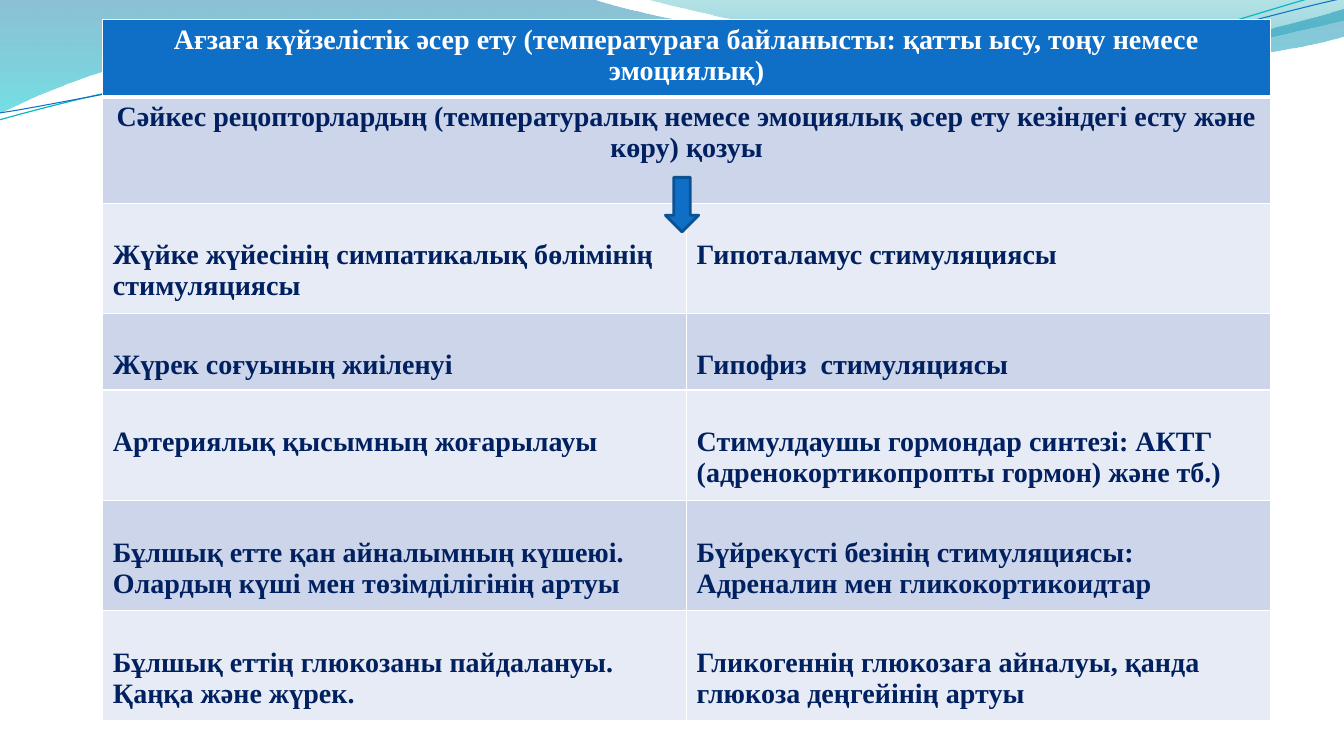
from lxml import etree
from pptx import Presentation
from pptx.dml.color import RGBColor
from pptx.enum.shapes import MSO_SHAPE as Shape
from pptx.enum.text import PP_ALIGN as Align
from pptx.oxml.ns import qn
from pptx.util import Inches, Pt

COLORS = {
    "blue": "0F6FC6", "outline": "0B5292", "teal": "0AB8BF", "navy": "002060",
    "white": "FFFFFF", "band": "CCD5EA", "light": "E7EBF5",
    "wave_blue": "0074A1", "wave_cyan": "00C6CF",
    "wave_green": "00A1A9", "wave_sky": "008BBF",
}
FONT = "Times New Roman"


def draw_wave(page, start, segments, close):
    points = [(Inches(segment[i]), Inches(segment[i + 1]))
              for segment in segments for i in range(0, len(segment), 2)]
    builder = page.shapes.build_freeform(Inches(start[0]), Inches(start[1]))
    builder.add_line_segments(points, close=close)
    wave = builder.convert_to_shape()
    wave.shadow.inherit = False
    lines = iter(list(wave._element.spPr.iter(qn("a:lnTo"))))
    for segment in segments:
        parts = [next(lines) for _ in range(len(segment) // 2)]
        if len(parts) == 3:
            curve = etree.Element(qn("a:cubicBezTo"))
            parts[0].addprevious(curve)
            for part in parts:
                curve.append(part[0])
                part.getparent().remove(part)
    return wave


def fill_cell(cell, text, fill, color="navy", align=Align.LEFT, top=0.05,
              line_above=1, line_below=1):
    cell.margin_top = Inches(top)
    properties = cell._tc.get_or_add_tcPr()
    for side, width in (("L", 1), ("R", 1), ("T", line_above), ("B", line_below)):
        border = etree.SubElement(properties, qn("a:ln" + side), w=str(Pt(width)))
        solid = etree.SubElement(border, qn("a:solidFill"))
        etree.SubElement(solid, qn("a:srgbClr"), val=COLORS["white"])
    cell.fill.solid()
    cell.fill.fore_color.rgb = RGBColor.from_string(COLORS[fill])
    cell.text = text
    for para in cell.text_frame.paragraphs:
        para.alignment = align
        for span in para.runs:
            span.font.name = FONT
            span.font.size = Pt(20)
            span.font.bold = True
            span.font.color.rgb = RGBColor.from_string(COLORS[color])


deck = Presentation()
deck.slide_width = Inches(13.33)
deck.slide_height = Inches(7.5)
page = deck.slides.add_slide(deck.slide_layouts[6])

filled_waves = [
    ((-0.01, 0),
     [(5.87, -0.01), (6.34, 0.17, 8.85, 0.63, 10.11, 0.63),
      (11.38, 0.63, 12.78, 0.26, 13.33, 0.09), (13.35, 0.36),
      (13.11, 0.44, 11.6, 0.76, 9.94, 0.75), (8.29, 0.75, 5.09, 0.28, 3.43, 0.34),
      (1.72, 0.36, 0.61, 0.83, -0.01, 1.13)],
     [("wave_blue", 45), ("wave_cyan", 55)]),
    ((6.39, -0.01),
     [(6.79, 0.11, 9.09, 0.62, 10.25, 0.65),
      (11.41, 0.69, 12.82, 0.32, 13.33, 0.21), (13.33, 0)],
     [("wave_green", 30), ("wave_sky", 45)]),
]
for start, segments, stops in filled_waves:
    wave = draw_wave(page, start, segments, True)
    wave.line.fill.background()
    wave.fill.gradient()
    wave.fill.gradient_angle = 270
    for stop, (color, _) in zip(wave.fill.gradient_stops, stops):
        stop.color.rgb = RGBColor.from_string(COLORS[color])
    for tint, (_, opacity) in zip(wave._element.spPr.iter(qn("a:srgbClr")), stops):
        etree.SubElement(tint, qn("a:alpha"), val=str(opacity * 1000))

line_waves = [
    ((-0.01, 1.19),
     [(0.64, 1.01, 2.11, 0.62, 3.69, 0.55), (5.27, 0.48, 7.9, 0.87, 9.5, 0.76),
      (11.1, 0.66, 12.52, 0.08, 13.31, -0.1)], "teal", 0.85),
    ((0, 1.12),
     [(0.63, 1.03, 2.18, 0.66, 3.78, 0.59), (5.37, 0.53, 7.96, 0.82, 9.55, 0.72),
      (11.15, 0.62, 12.55, 0.14, 13.34, -0.02)], "blue", 0.75),
]
for start, segments, color, width in line_waves:
    wave = draw_wave(page, start, segments, False)
    wave.fill.background()
    wave.line.color.rgb = RGBColor.from_string(COLORS[color])
    wave.line.width = Pt(width)

headings = [
    "Ағзаға күйзелістік әсер ету (температураға байланысты: қатты ысу, тоңу немесе эмоциялық)",
    "Сәйкес рецопторлардың (температуралық немесе эмоциялық әсер ету кезіндегі есту және көру) қозуы",
]
responses = [
    ("Жүйке жүйесінің симпатикалық бөлімінің стимуляциясы", "Гипоталамус стимуляциясы"),
    ("Жүрек соғуының жиіленуі", "Гипофиз  стимуляциясы"),
    ("Артериялық қысымның жоғарылауы",
     "Стимулдаушы гормондар синтезі: АКТГ (адренокортикопропты гормон) және тб.)"),
    ("Бұлшық етте қан айналымның күшеюі.\nОлардың күші мен төзімділігінің артуы",
     "Бүйрекүсті безінің стимуляциясы:\nАдреналин мен гликокортикоидтар"),
    ("Бұлшық еттің глюкозаны пайдалануы. Қаңқа және жүрек.",
     "Гликогеннің глюкозаға айналуы, қанда глюкоза деңгейінің артуы"),
]
row_heights = [0.77, 1.06, 1.09, 0.76, 1.1, 1.09, 1.09]
table = page.shapes.add_table(len(row_heights), 2, Inches(1.02), Inches(0.19),
                              Inches(11.58), Inches(sum(row_heights))).table
for row, height in zip(table.rows, row_heights):
    row.height = Inches(height)
for column in table.columns:
    column.width = Inches(5.79)

heading_formats = [
    {"fill": "blue", "color": "white", "line_below": 3},
    {"fill": "band", "line_above": 3},
]
for index, (heading, style) in enumerate(zip(headings, heading_formats)):
    left, right = table.cell(index, 0), table.cell(index, 1)
    left.merge(right)
    fill_cell(left, heading, align=Align.CENTER, **style)
    fill_cell(right, "", **style)
for index, pair in enumerate(responses):
    for column, response in enumerate(pair):
        fill_cell(table.cell(index + len(headings), column), response,
                  fill=("light", "band")[index % 2], top=0.36)

arrow = page.shapes.add_shape(Shape.DOWN_ARROW, Inches(6.6), Inches(1.76),
                              Inches(0.33), Inches(0.54))
arrow.shadow.inherit = False
arrow.fill.solid()
arrow.fill.fore_color.rgb = RGBColor.from_string(COLORS["blue"])
arrow.line.color.rgb = RGBColor.from_string(COLORS["outline"])
arrow.line.width = Pt(2)

deck.save("out.pptx")
